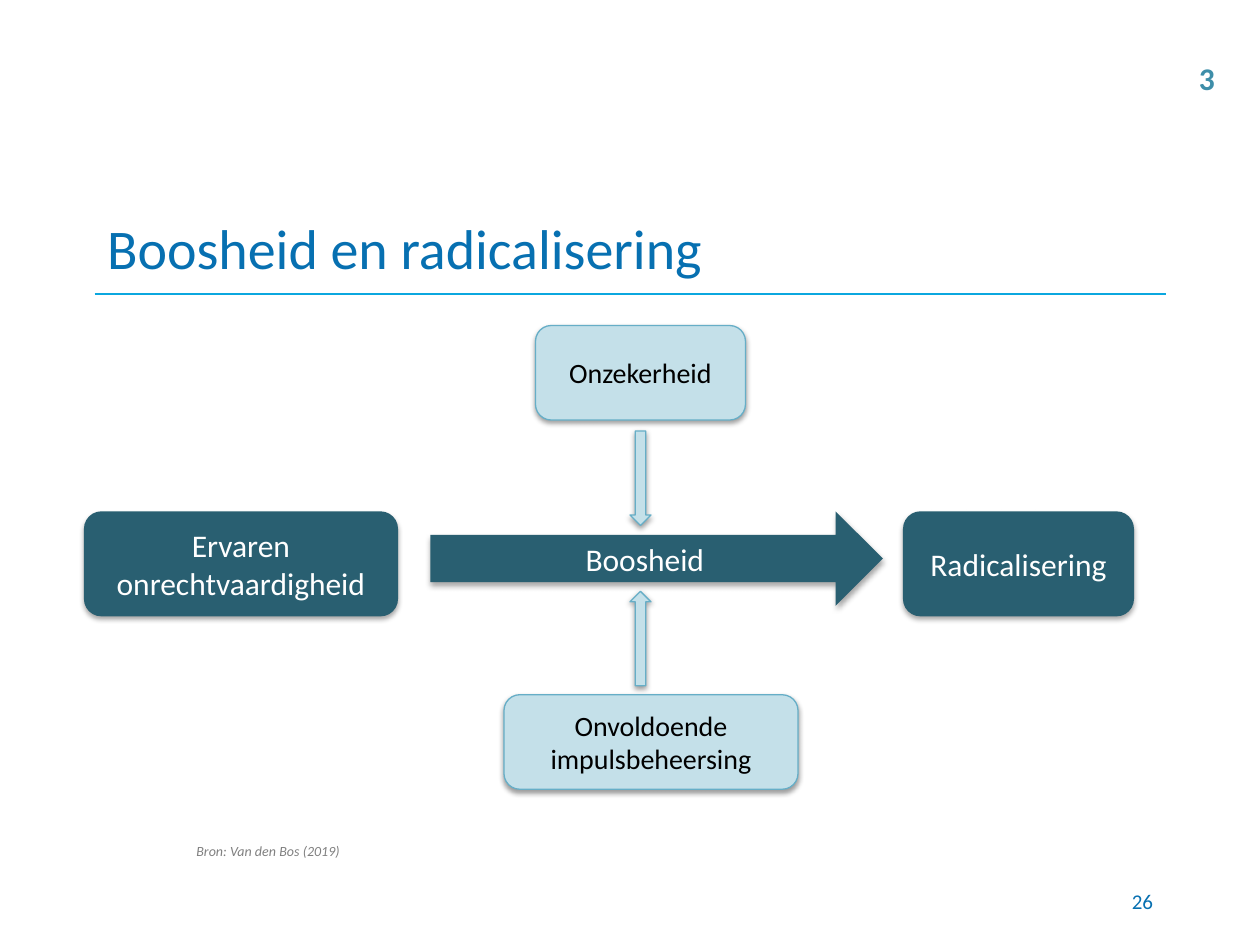
from pptx import Presentation
from pptx.dml.color import RGBColor
from pptx.enum.shapes import MSO_CONNECTOR as Conn, MSO_SHAPE as Shape
from pptx.enum.text import MSO_ANCHOR as Anchor, PP_ALIGN as Align
from pptx.oxml import parse_xml
from pptx.oxml.ns import nsdecls, qn
from pptx.util import Pt

BLUE = RGBColor(0x07, 0x70, 0xB1)
RULE = RGBColor(0x0B, 0xA7, 0xDF)
DARK = RGBColor(0x29, 0x5F, 0x71)
PALE = RGBColor(0xC4, 0xE0, 0xE9)
EDGE = RGBColor(0x66, 0xAE, 0xC7)
TEAL = RGBColor(0x3E, 0x8E, 0xA9)
GREY = RGBColor(0x80, 0x80, 0x80)
WHITE = RGBColor(0xFF, 0xFF, 0xFF)
BLACK = RGBColor(0, 0, 0)


def write(frame, text, size, color, align, anchor=Anchor.MIDDLE, wrap=True):
    frame.word_wrap = wrap
    frame.vertical_anchor = anchor
    para = frame.paragraphs[0]
    para.text = text
    para.alignment = align
    font = para.font
    font.name, font.size = "Calibri", Pt(size)
    font.color.rgb = color
    return font


def add_shade(shape, alpha, dist):
    shape.shadow.inherit = False
    effects = shape._element.spPr.find(qn("a:effectLst"))
    effects.append(parse_xml(
        f'<a:outerShdw {nsdecls("a")} blurRad="{Pt(3.1)}" dist="{Pt(dist)}" '
        'dir="5400000" rotWithShape="0"><a:srgbClr val="000000">'
        f'<a:alpha val="{alpha * 1000}"/></a:srgbClr></a:outerShdw>'))


def add_block(slide, kind, box, dark=False, text=None, turn=0):
    shape = slide.shapes.add_shape(kind, *map(Pt, box))
    shape.rotation = turn
    shape.fill.solid()
    shape.fill.fore_color.rgb = DARK if dark else PALE
    if dark:
        shape.line.fill.background()
        add_shade(shape, 35, 1.8)
    else:
        shape.line.color.rgb = EDGE
        shape.line.width = Pt(0.75)
        add_shade(shape, 38, 1.6)
    if text:
        size, color = (18, WHITE) if dark else (16, BLACK)
        write(shape.text_frame, text, size, color, Align.CENTER)


def add_head(slide, box):
    left, top, width, height = box
    title = slide.shapes.title
    title.left, title.top, title.width, title.height = map(Pt, box)
    write(title.text_frame, "Boosheid en radicalisering", 32, BLUE, Align.LEFT)
    base = top + height
    rule = slide.shapes.add_connector(
        Conn.STRAIGHT, Pt(left), Pt(base), Pt(left + width), Pt(base))
    rule.line.color.rgb = RULE
    rule.line.width = Pt(0.75)
    rule._element.spPr.append(parse_xml(f'<a:effectLst {nsdecls("a")}/>'))


def add_model(slide, box):
    left, top, width, height = box
    row = top + 106.2
    mid = left + 318
    high, long, thin = 54, 54, 12
    add_block(slide, Shape.ROUNDED_RECTANGLE, (left, row, 179.5, 60), True,
              "Ervaren onrechtvaardigheid")
    add_block(slide, Shape.ROUNDED_RECTANGLE, (left + width - 132, row, 132, 60),
              True, "Radicalisering")
    add_block(slide, Shape.RIGHT_ARROW, (left + 198, row, 258.5, high), True,
              "Boosheid")
    for center, turn in ((top + 87.3, 90), (top + 178.9, 270)):
        add_block(slide, Shape.RIGHT_ARROW,
                  (mid - long / 2, center - thin / 2, long, thin), turn=turn)
    add_block(slide, Shape.ROUNDED_RECTANGLE,
              (left + 240, top + height - high, 168, high),
              text="Onvoldoende impulsbeheersing")
    add_block(slide, Shape.ROUNDED_RECTANGLE, (mid - 60, top, 120, high),
              text="Onzekerheid")


def add_note(slide, box, *style):
    note = slide.shapes.add_textbox(*map(Pt, box))
    return write(note.text_frame, *style)


def main():
    deck = Presentation()
    deck.slide_width, deck.slide_height = Pt(720), Pt(540)
    slide = deck.slides.add_slide(deck.slide_layouts[5])
    add_head(slide, (54, 114, 612, 54))
    add_model(slide, (48, 186, 600, 265))
    add_note(slide, (516, 500.5, 150, 28.8), "26", 12, BLUE, Align.RIGHT)
    source = add_note(slide, (54, 478, 198.5, 17), "Bron: Van den Bos (2019)",
                      8, GREY, Align.CENTER, Anchor.TOP)
    source.italic = True
    mark = add_note(slide, (678, 30, 24, 29), "3", 18, TEAL, Align.LEFT,
                    Anchor.TOP, False)
    mark.bold = True
    deck.save("out.pptx")


if __name__ == "__main__":
    main()
